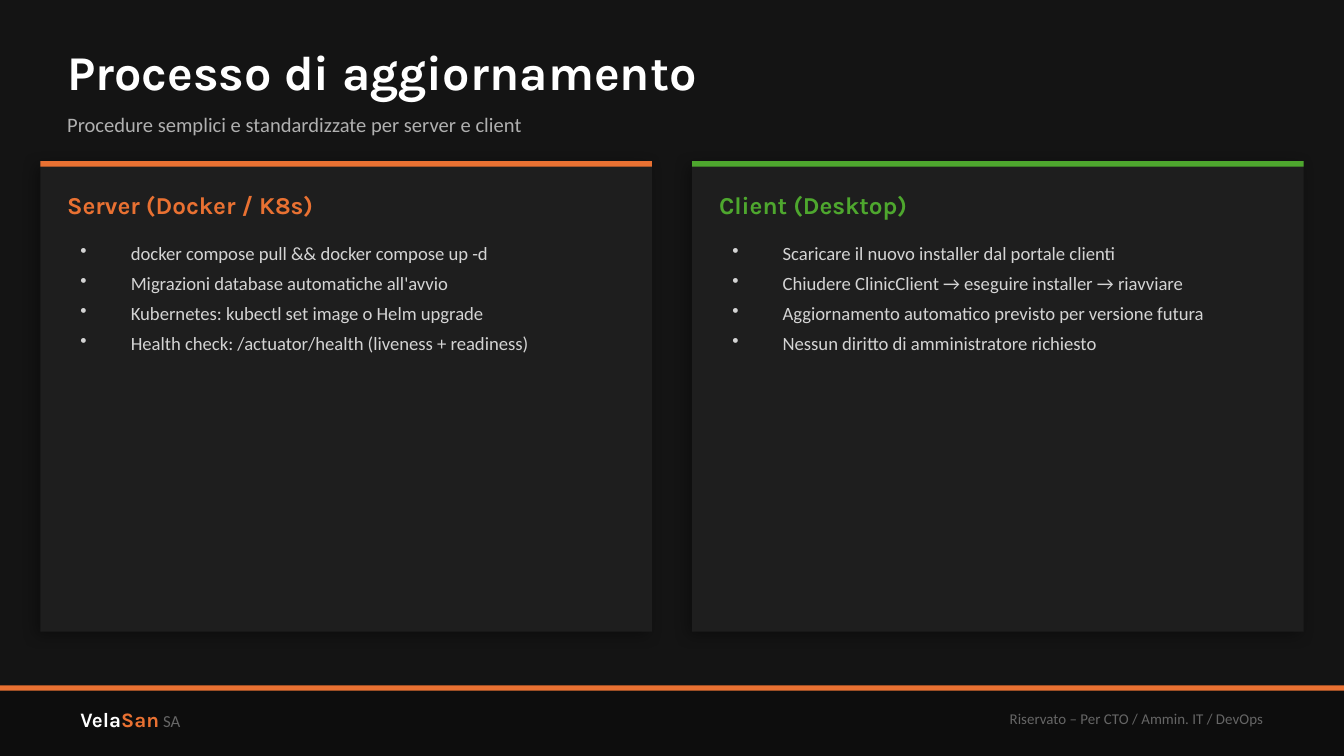
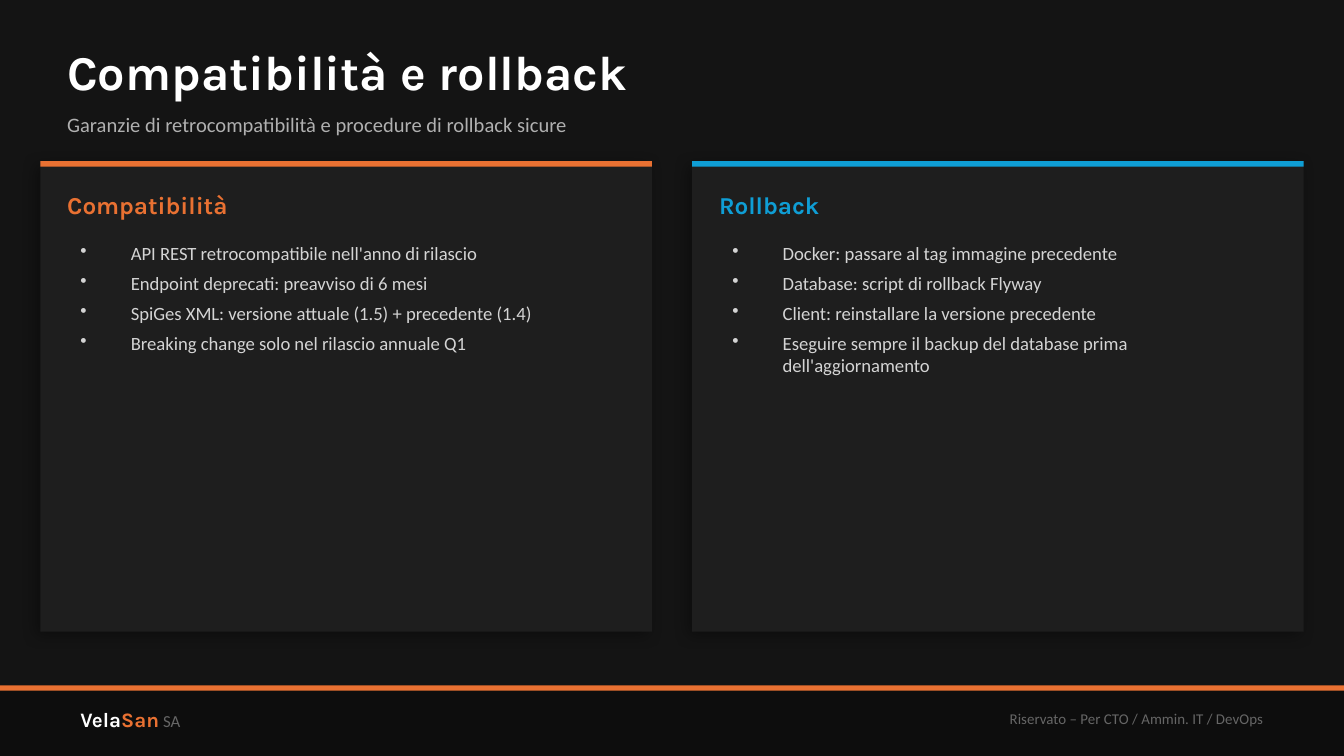
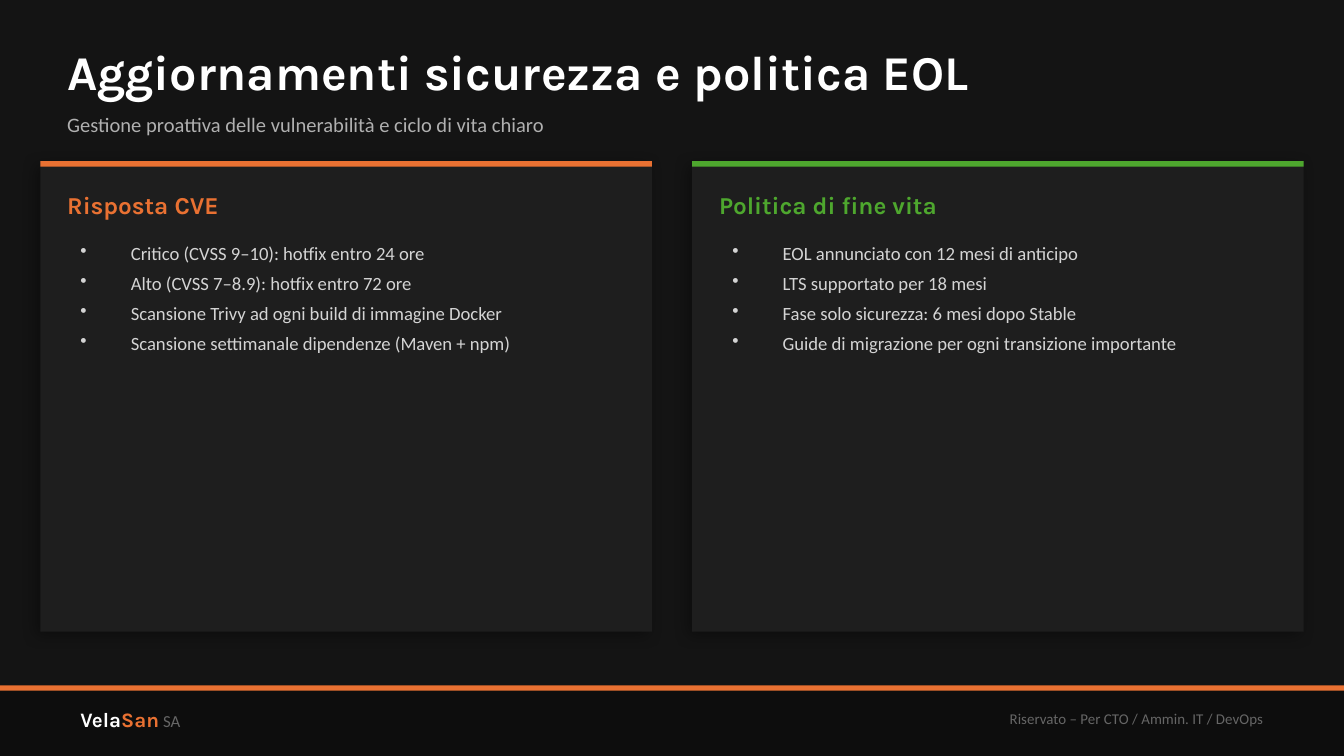
from lxml import etree
from pptx import Presentation
from pptx.dml.color import RGBColor
from pptx.enum.shapes import MSO_SHAPE
from pptx.enum.text import MSO_ANCHOR, PP_ALIGN
from pptx.oxml.ns import qn
from pptx.util import Pt

RECTANGLE = MSO_SHAPE.RECTANGLE
TOP, MIDDLE = MSO_ANCHOR.TOP, MSO_ANCHOR.MIDDLE
LEFT, RIGHT = PP_ALIGN.LEFT, PP_ALIGN.RIGHT

BACKGROUND = RGBColor(0x14, 0x14, 0x14)
FOOTER_FILL = RGBColor(0x0D, 0x0D, 0x0D)
CARD_FILL = RGBColor(0x1E, 0x1E, 0x1E)
WHITE = RGBColor(0xFF, 0xFF, 0xFF)
SUBTITLE_GREY = RGBColor(0xB0, 0xB0, 0xB0)
BODY_GREY = RGBColor(0xD4, 0xD4, 0xD4)
FOOTER_GREY = RGBColor(0x66, 0x66, 0x66)
ORANGE = RGBColor(0xE9, 0x71, 0x32)
GREEN = RGBColor(0x4E, 0xA7, 0x2E)
BLUE = RGBColor(0x0F, 0x9E, 0xD5)

HEADING_FONT, BODY_FONT = "Karla", "Calibri"

# Text styles: size, font, colour, bold
TITLE_STYLE = (26, HEADING_FONT, WHITE, True)
SUBTITLE_STYLE = (11, BODY_FONT, SUBTITLE_GREY, False)
BULLET_STYLE = (10, BODY_FONT, BODY_GREY, False)
NOTICE_STYLE = (8, BODY_FONT, FOOTER_GREY, False)

COMPANY = [
    ("Vela", (11, HEADING_FONT, WHITE, True)),
    ("San", (11, HEADING_FONT, ORANGE, True)),
    (" SA", (9, BODY_FONT, FOOTER_GREY, False)),
]
NOTICE = "Riservato – Per CTO / Ammin. IT / DevOps"

# Each slide: title, subtitle, cards of (heading, accent, bullets)
SLIDES = [
    ("Processo di aggiornamento",
     "Procedure semplici e standardizzate per server e client",
     [("Server (Docker / K8s)", ORANGE, [
         "docker compose pull && docker compose up -d",
         "Migrazioni database automatiche all'avvio",
         "Kubernetes: kubectl set image o Helm upgrade",
         "Health check: /actuator/health (liveness + readiness)"]),
      ("Client (Desktop)", GREEN, [
          "Scaricare il nuovo installer dal portale clienti",
          "Chiudere ClinicClient → eseguire installer → riavviare",
          "Aggiornamento automatico previsto per versione futura",
          "Nessun diritto di amministratore richiesto"])]),
    ("Compatibilità e rollback",
     "Garanzie di retrocompatibilità e procedure di rollback sicure",
     [("Compatibilità", ORANGE, [
         "API REST retrocompatibile nell'anno di rilascio",
         "Endpoint deprecati: preavviso di 6 mesi",
         "SpiGes XML: versione attuale (1.5) + precedente (1.4)",
         "Breaking change solo nel rilascio annuale Q1"]),
      ("Rollback", BLUE, [
          "Docker: passare al tag immagine precedente",
          "Database: script di rollback Flyway",
          "Client: reinstallare la versione precedente",
          "Eseguire sempre il backup del database prima dell'aggiornamento"])]),
    ("Aggiornamenti sicurezza e politica EOL",
     "Gestione proattiva delle vulnerabilità e ciclo di vita chiaro",
     [("Risposta CVE", ORANGE, [
         "Critico (CVSS 9–10): hotfix entro 24 ore",
         "Alto (CVSS 7–8.9): hotfix entro 72 ore",
         "Scansione Trivy ad ogni build di immagine Docker",
         "Scansione settimanale dipendenze (Maven + npm)"]),
      ("Politica di fine vita", GREEN, [
          "EOL annunciato con 12 mesi di anticipo",
          "LTS supportato per 18 mesi",
          "Fase solo sicurezza: 6 mesi dopo Stable",
          "Guide di migrazione per ogni transizione importante"])]),
]

SLIDE_W, SLIDE_H = 720, 405
MARGIN = 36
CONTENT_W = SLIDE_W - 2 * MARGIN
FOOTER_TOP, FOOTER_TEXT_TOP, FOOTER_TEXT_H = 367.2, 370.8, 28.8
ACCENT_H = 2.88
CARD_MARGIN, CARD_GAP = 21.6, 21.6
CARD_W = (SLIDE_W - 2 * CARD_MARGIN - CARD_GAP) / 2
CARD_TOP, CARD_H, CARD_PAD = 86.4, 252, 14.4
BULLET_INDENT = 27


def add_rectangle(slide, left, top, width, height, color):
    rectangle = slide.shapes.add_shape(
        RECTANGLE, Pt(left), Pt(top), Pt(width), Pt(height))
    rectangle.fill.solid()
    rectangle.fill.fore_color.rgb = color
    rectangle.line.fill.background()
    rectangle.shadow.inherit = False
    return rectangle


def add_soft_shadow(shape):
    effects = shape._element.spPr.find(qn("a:effectLst"))
    shadow = etree.SubElement(
        effects, qn("a:outerShdw"), blurRad=str(Pt(8)), dist=str(Pt(3)),
        dir=str(135 * 60000), algn="bl", rotWithShape="0")
    black = etree.SubElement(shadow, qn("a:srgbClr"), val="000000")
    etree.SubElement(black, qn("a:alpha"), val="35000")


def style_run(run, style):
    size, name, color, bold = style
    run.font.size = Pt(size)
    run.font.name = name
    run.font.color.rgb = color
    run.font.bold = bold


def add_text(slide, left, top, width, height, paragraphs,
             anchor=MIDDLE, align=LEFT, inset=True):
    """Add a box whose paragraphs are lists of (text, style) runs."""
    box = slide.shapes.add_textbox(Pt(left), Pt(top), Pt(width), Pt(height))
    frame = box.text_frame
    frame.word_wrap = True
    frame.vertical_anchor = anchor
    if not inset:
        frame.margin_left = frame.margin_right = 0
        frame.margin_top = frame.margin_bottom = 0
    for index, runs in enumerate(paragraphs):
        paragraph = frame.add_paragraph() if index else frame.paragraphs[0]
        paragraph.alignment = align
        for text, style in runs:
            run = paragraph.add_run()
            run.text = text
            style_run(run, style)
    return frame


def add_bullets(slide, left, top, width, height, bullets):
    frame = add_text(slide, left, top, width, height,
                     [[(bullet, BULLET_STYLE)] for bullet in bullets], TOP)
    for paragraph in frame.paragraphs:
        properties = paragraph._p.get_or_add_pPr()
        properties.set("marL", str(Pt(BULLET_INDENT)))
        properties.set("indent", str(-Pt(BULLET_INDENT)))
        etree.SubElement(properties, qn("a:buChar"), char="•")
        paragraph.space_after = Pt(4)


def add_footer(slide):
    add_rectangle(slide, 0, FOOTER_TOP, SLIDE_W, SLIDE_H - FOOTER_TOP, FOOTER_FILL)
    add_rectangle(slide, 0, FOOTER_TOP, SLIDE_W, ACCENT_H, ORANGE)
    add_text(slide, MARGIN, FOOTER_TEXT_TOP, 216, FOOTER_TEXT_H, [COMPANY])
    notice_w = 288
    add_text(slide, SLIDE_W - MARGIN - notice_w, FOOTER_TEXT_TOP, notice_w,
             FOOTER_TEXT_H, [[(NOTICE, NOTICE_STYLE)]], align=RIGHT)


def add_card(slide, left, heading, accent, bullets):
    add_soft_shadow(add_rectangle(slide, left, CARD_TOP, CARD_W, CARD_H, CARD_FILL))
    add_rectangle(slide, left, CARD_TOP, CARD_W, ACCENT_H, accent)
    text_left, text_w = left + CARD_PAD, CARD_W - 2 * CARD_PAD
    heading_style = (13, HEADING_FONT, accent, True)
    add_text(slide, text_left, CARD_TOP + 10.8, text_w, 25.2,
             [[(heading, heading_style)]], inset=False)
    add_bullets(slide, text_left, CARD_TOP + 39.6, text_w, 201.6, bullets)


def add_content_slide(deck, title, subtitle, cards):
    slide = deck.slides.add_slide(deck.slide_layouts[6])
    slide.background.fill.solid()
    slide.background.fill.fore_color.rgb = BACKGROUND
    add_footer(slide)
    add_text(slide, MARGIN, 18, CONTENT_W, 39.6,
             [[(title, TITLE_STYLE)]], inset=False)
    add_text(slide, MARGIN, 54, CONTENT_W, 25.2,
             [[(subtitle, SUBTITLE_STYLE)]], inset=False)
    for column, card in enumerate(cards):
        add_card(slide, CARD_MARGIN + column * (CARD_W + CARD_GAP), *card)


def main():
    deck = Presentation()
    deck.slide_width, deck.slide_height = Pt(SLIDE_W), Pt(SLIDE_H)
    for content in SLIDES:
        add_content_slide(deck, *content)
    deck.save("out.pptx")


if __name__ == "__main__":
    main()
